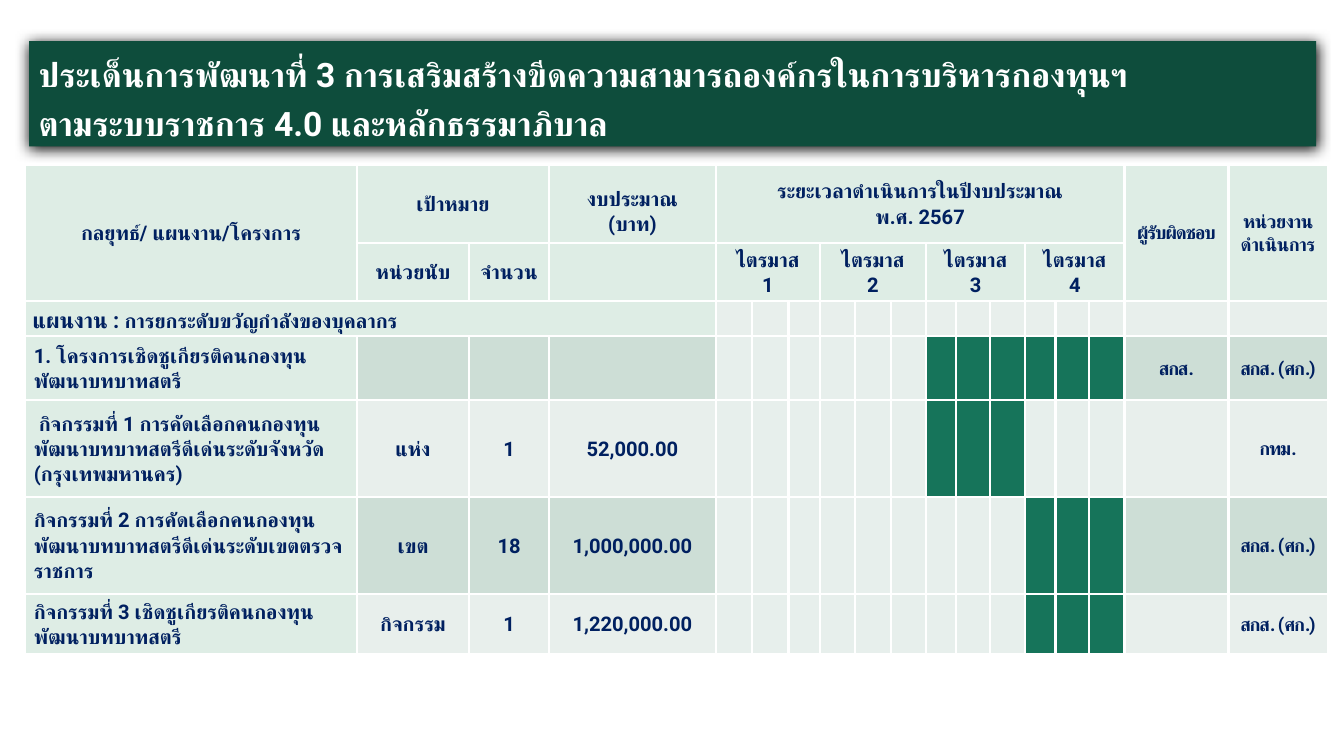
"""Build a slide with a project plan table and its quarterly schedule."""
from dataclasses import dataclass

from lxml.etree import SubElement
from pptx import Presentation
from pptx.dml.color import RGBColor
from pptx.enum.lang import MSO_LANGUAGE_ID as Language
from pptx.enum.text import MSO_ANCHOR as Anchor, MSO_AUTO_SIZE as AutoSize, PP_ALIGN as Align
from pptx.oxml.ns import qn
from pptx.util import Inches, Pt


@dataclass(frozen=True)
class Theme:
    font: str = "Roboto"
    banner: str = "0E4D3C"
    banner_text: str = "FFFFFF"
    ink: str = "002060"
    header: str = "ADD3C0"
    header_opacity: int = 40
    dark_band: str = "CDDED6"
    light_band: str = "E8EFEC"
    idle: str = "E7EFEC"
    active: str = "16745A"
    border: str = "FFFFFF"
    shadow: str = "000000"
    title_size: int = 20
    group_size: int = 13
    body_size: int = 12
    small_size: int = 11


class PlanSlide:
    def __init__(self, presentation, theme):
        self.theme = theme
        self.page = presentation.slide_width, presentation.slide_height
        self.slide = presentation.slides.add_slide(presentation.slide_layouts[5])

    def across(self, percent):
        return round(self.page[0] * percent / 100)

    def down(self, percent):
        return round(self.page[1] * percent / 100)

    def box(self, left, top, width, height):
        return self.across(left), self.down(top), self.across(width), self.down(height)

    def run(self, paragraph, text, size, color, tracking=0):
        run = paragraph.add_run()
        run.text = text
        font = run.font
        font.size, font.bold, font.name = Pt(size), True, self.theme.font
        font.color.rgb = RGBColor.from_string(color)
        font.language_id = Language.THAI
        properties = run._r.get_or_add_rPr()
        SubElement(properties, qn("a:cs"), typeface=self.theme.font)
        if tracking:
            properties.set("spc", str(round(tracking * 100)))

    def title(self, lines, box):
        shape = self.slide.shapes.title
        shape.left, shape.top, shape.width, shape.height = self.box(*box)
        shape.fill.solid()
        shape.fill.fore_color.rgb = RGBColor.from_string(self.theme.banner)
        effects = SubElement(shape._element.spPr, qn("a:effectLst"))
        shadow = SubElement(effects, qn("a:outerShdw"), blurRad=str(Pt(8.5)), dist=str(Pt(1)),
                            dir="5400000", algn="t", rotWithShape="0")
        SubElement(shadow, qn("a:srgbClr"), val=self.theme.shadow)
        frame = shape.text_frame
        frame.auto_size, frame.word_wrap = AutoSize.NONE, True
        frame.vertical_anchor = Anchor.TOP
        frame.margin_left = frame.margin_right = Inches(0.08)
        frame.margin_top = frame.margin_bottom = Inches(0.04)
        paragraph = frame.paragraphs[0]
        paragraph.alignment, paragraph.line_spacing = Align.LEFT, 1.2
        for index, line in enumerate(lines):
            if index:
                paragraph.add_line_break()
            self.run(paragraph, line, self.theme.title_size, self.theme.banner_text)

    def grid(self, left, top, columns, rows):
        box = self.box(left, top, sum(columns), sum(rows))
        self.table = self.slide.shapes.add_table(len(rows), len(columns), *box).table
        for column, width in zip(self.table.columns, columns):
            column.width = self.across(width)
        for row, height in zip(self.table.rows, rows):
            row.height = self.down(height)

    def cell(self, row, column, fill, lines=(), span=(1, 1), size=None, tracking=0,
             align=Align.CENTER, side=0.06, top=0, spacing=1.07, after=0):
        cell = self.table.cell(row, column)
        if span != (1, 1):
            cell.merge(self.table.cell(row + span[0] - 1, column + span[1] - 1))
        cell.fill.solid()
        cell.fill.fore_color.rgb = RGBColor.from_string(fill)
        if fill == self.theme.header:
            color = cell._tc.tcPr.find(".//" + qn("a:srgbClr"))
            SubElement(color, qn("a:alpha"), val=str(self.theme.header_opacity * 1000))
        cell.vertical_anchor = Anchor.MIDDLE
        cell.margin_left = cell.margin_right = Inches(side)
        cell.margin_top, cell.margin_bottom = Inches(top), 0
        frame = cell.text_frame
        for index, line in enumerate(lines):
            paragraph = frame.add_paragraph() if index else frame.paragraphs[0]
            paragraph.alignment, paragraph.line_spacing = align, spacing
            paragraph.space_after = Pt(after)
            runs = [(line, size or self.theme.body_size)] if isinstance(line, str) else line
            for text, run_size in runs:
                self.run(paragraph, text, run_size, self.theme.ink, tracking)

    def finish_grid(self):
        for cell in self.table.iter_cells():
            paragraph = cell.text_frame.paragraphs[0]
            if not paragraph.runs:
                SubElement(paragraph._p, qn("a:endParaRPr"), sz=str(self.theme.body_size * 100))
            properties = cell._tc.get_or_add_tcPr()
            for index, side in enumerate(("a:lnL", "a:lnR", "a:lnT", "a:lnB")):
                line = SubElement(properties, qn(side), w=str(Pt(1.5)))
                fill = SubElement(line, qn("a:solidFill"))
                SubElement(fill, qn("a:srgbClr"), val=self.theme.border)
                properties.insert(index, line)


TITLE = ("ประเด็นการพัฒนาที่ 3 การเสริมสร้างขีดความสามารถองค์กรในการบริหารกองทุนฯ",
         "ตามระบบราชการ 4.0 และหลักธรรมาภิบาล")
MONTH_WIDTHS = [2.7, 2.7, 2.34, 2.61, 2.7, 2.61, 2.25, 2.52, 2.61, 2.25, 2.52, 2.61]
COLUMNS = [24.66, 8.37, 5.94, 12.42, *MONTH_WIDTHS, 7.74, 7.38]
ROWS = [10.4, 7.68, 4.64, 8.48, 12.8, 12.8, 8]
FIRST_MONTH, OWNER, AGENCY = 4, 16, 17
PROJECTS = [
    ("1. โครงการเชิดชูเกียรติคนกองทุนพัฒนาบทบาทสตรี",
     "", "", "", range(6, 12), "สกส.", "สกส. (ศก.)"),
    (" กิจกรรมที่ 1 การคัดเลือกคนกองทุนพัฒนาบทบาทสตรีดีเด่นระดับจังหวัด (กรุงเทพมหานคร)",
     "แห่ง", "1", "52,000.00", range(6, 9), "", "กทม."),
    ("กิจกรรมที่ 2 การคัดเลือกคนกองทุนพัฒนาบทบาทสตรีดีเด่นระดับเขตตรวจราชการ",
     "เขต", "18", "1,000,000.00", range(9, 12), "", "สกส. (ศก.)"),
    ("กิจกรรมที่ 3 เชิดชูเกียรติคนกองทุนพัฒนาบทบาทสตรี",
     "กิจกรรม", "1", "1,220,000.00", range(9, 12), "", "สกส. (ศก.)"),
]


def add_headings(plan, theme):
    head = theme.header
    plan.cell(0, 0, head, ["กลยุทธ์/ แผนงาน/โครงการ"], span=(2, 1))
    plan.cell(0, 1, head, ["เป้าหมาย"], span=(1, 2))
    plan.cell(0, 3, head, ["งบประมาณ", "(บาท)"], top=0.12)
    plan.cell(0, FIRST_MONTH, head, ["ระยะเวลาดำเนินการในปีงบประมาณ", "พ.ศ. 2567"], span=(1, 12))
    plan.cell(0, OWNER, head, ["ผู้รับผิดชอบ"], span=(2, 1), size=theme.small_size, tracking=-0.7)
    plan.cell(0, AGENCY, head, ["หน่วยงานดำเนินการ"], span=(2, 1),
              size=theme.small_size, tracking=-0.3)
    plan.cell(1, 1, head, ["หน่วยนับ"])
    plan.cell(1, 2, head, ["จำนวน"])
    plan.cell(1, 3, head)
    for quarter in range(4):
        plan.cell(1, FIRST_MONTH + 3 * quarter, head, ["ไตรมาส", str(quarter + 1)], span=(1, 3))
    group = [("แผนงาน : ", theme.group_size), ("การยกระดับขวัญกำลังของบุคลากร", theme.body_size)]
    plan.cell(2, 0, head, [group], span=(1, 4), align=Align.LEFT, spacing=1.2)
    for column in range(FIRST_MONTH, len(COLUMNS)):
        plan.cell(2, column, theme.light_band)


def add_projects(plan, theme):
    style = {"side": 0.07, "after": 8}
    for row, (name, unit, count, budget, months, owner, agency) in enumerate(PROJECTS, 3):
        band = theme.dark_band if row % 2 else theme.light_band
        plan.cell(row, 0, theme.header, [name], align=Align.LEFT, **style)
        for column, text in enumerate((unit, count, budget), 1):
            plan.cell(row, column, band, [text] if text else (), **style)
        for month in range(12):
            plan.cell(row, FIRST_MONTH + month, theme.active if month in months else theme.idle)
        for column, text in ((OWNER, owner), (AGENCY, agency)):
            plan.cell(row, column, band, [text] if text else (),
                      size=theme.small_size, tracking=-0.7, **style)


def main():
    presentation = Presentation()
    presentation.slide_width, presentation.slide_height = Inches(11.11), Inches(6.25)
    theme = Theme()
    plan = PlanSlide(presentation, theme)
    plan.title(TITLE, (2.16, 5.44, 95.77, 13.92))
    plan.grid(1.89, 21.76, COLUMNS, ROWS)
    add_headings(plan, theme)
    add_projects(plan, theme)
    plan.finish_grid()
    presentation.save("out.pptx")


if __name__ == "__main__":
    main()
